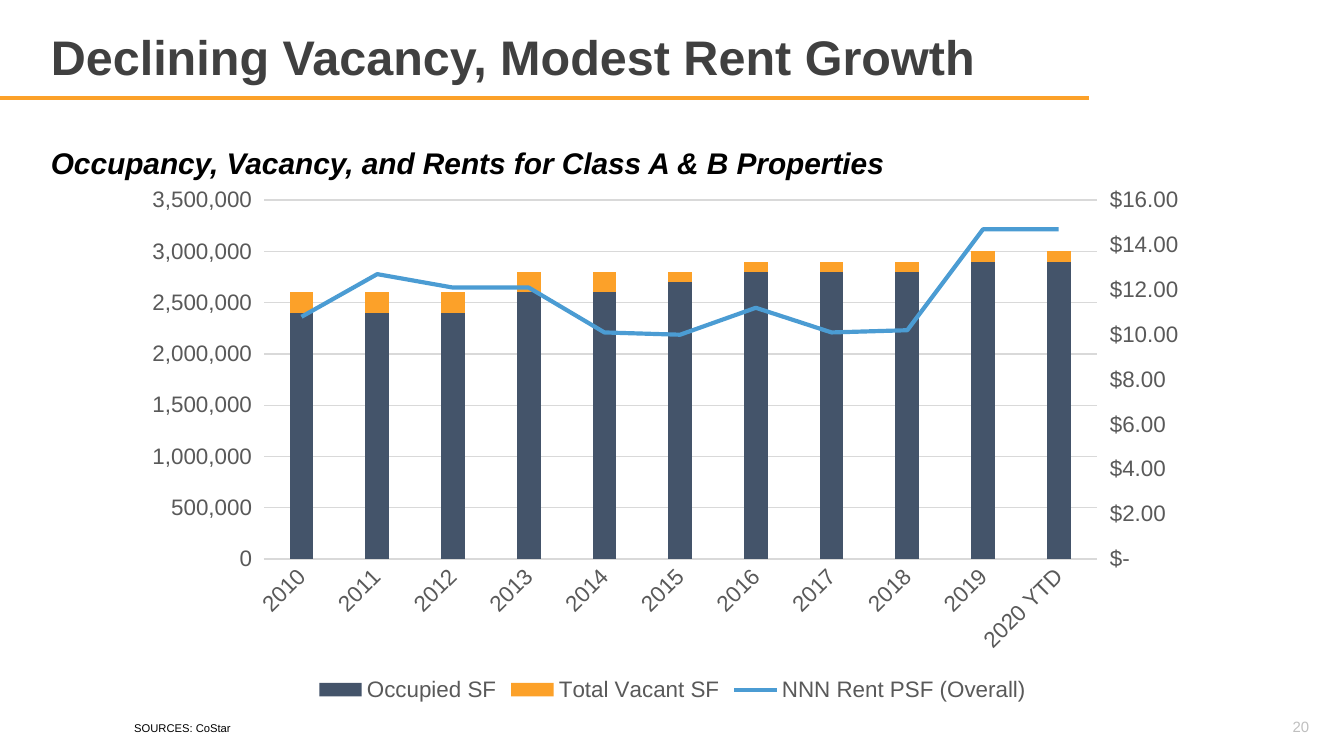
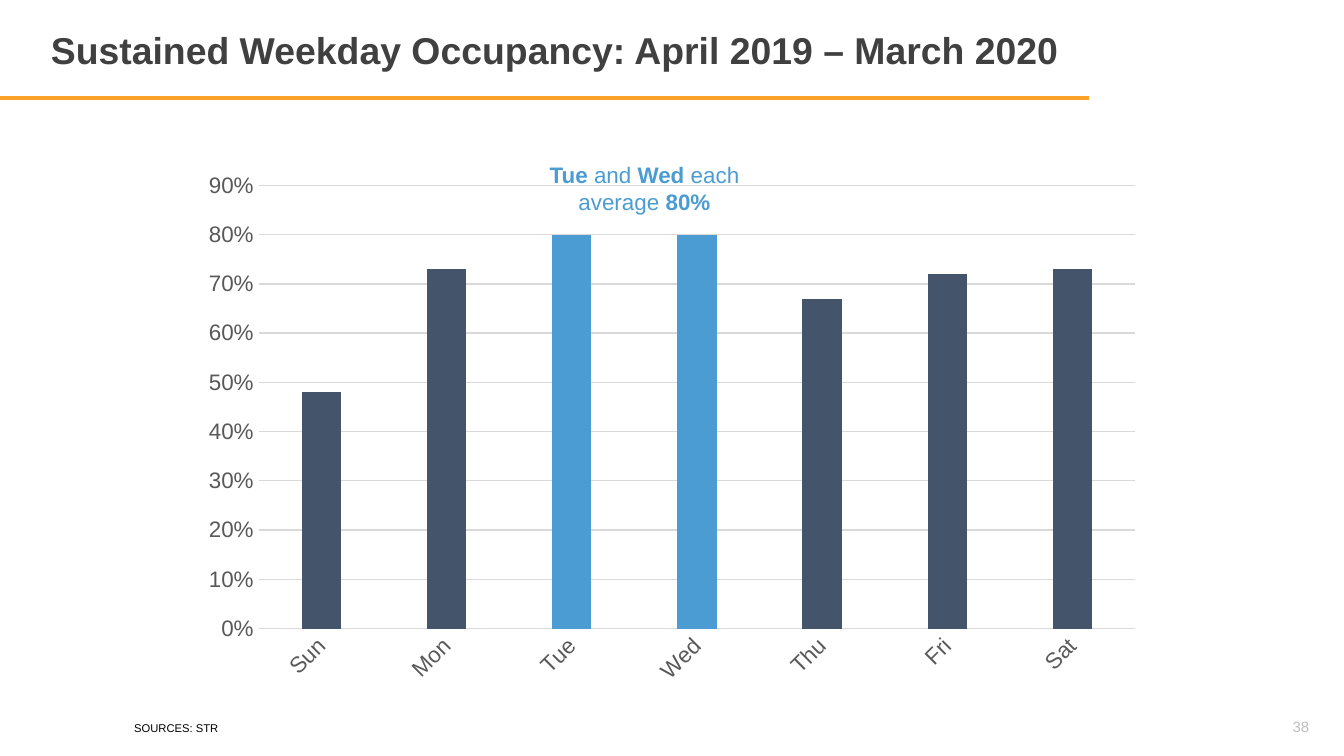
from copy import deepcopy
from dataclasses import dataclass

from lxml.etree import SubElement
from pptx import Presentation
from pptx.chart.axis import CategoryAxis, ValueAxis
from pptx.chart.data import CategoryChartData
from pptx.dml.color import RGBColor
from pptx.enum.chart import (XL_CHART_TYPE, XL_LEGEND_POSITION,
                             XL_MARKER_STYLE, XL_TICK_MARK)
from pptx.enum.shapes import MSO_CONNECTOR
from pptx.enum.text import MSO_ANCHOR, PP_ALIGN
from pptx.oxml import parse_xml
from pptx.oxml.ns import nsdecls, qn
from pptx.util import Inches, Pt


@dataclass(frozen=True)
class Theme:
    font: str = "Arial"
    title: str = "404040"
    text: str = "000000"
    label: str = "595959"
    grid: str = "D9D9D9"
    number: str = "BFBFBF"
    navy: str = "44546A"
    orange: str = "FCA129"
    blue: str = "4B9CD3"
    subtitle_size: int = 16
    label_size: int = 12
    chart_size: int = 10
    number_size: int = 8
    source_size: int = 6


THEME = Theme()

# Content
RENT = dict(
    title="Declining Vacancy, Modest Rent Growth", title_size=26, title_width=7.82,
    number="20", source="SOURCES: CoStar",
    subtitle="Occupancy, Vacancy, and Rents for Class A & B Properties",
    categories=["2010", "2011", "2012", "2013", "2014", "2015",
                "2016", "2017", "2018", "2019", "2020 YTD"],
    series=[
        ("Occupied SF", THEME.navy,
         [2400000, 2400000, 2400000, 2600000, 2600000, 2700000,
          2800000, 2800000, 2800000, 2900000, 2900000]),
        ("Total Vacant SF", THEME.orange, [200000] * 5 + [100000] * 6),
        ("NNN Rent PSF (Overall)", THEME.blue,
         [10.8, 12.7, 12.1, 12.1, 10.1, 10, 11.2, 10.1, 10.2, 14.7, 14.7]),
    ],
    frame=(0.98, 1.32, 8.05, 3.94), plot=(1.96, 1.49, 6.2, 2.67),
    kind=XL_CHART_TYPE.COLUMN_STACKED, overlap=100,
    scale=(3500000, 500000), number_format=r"#,##0_);[Red]\(#,##0\)",
)
WEEKDAY = dict(
    title="Sustained Weekday Occupancy: April 2019 – March 2020",
    title_size=20, title_width=8.21, number="38", source="SOURCES: STR",
    callout=[("Tue ", True), ("and", False), (" Wed ", True),
             ("each average", False), (" 80%", True)],
    categories=["Sun", "Mon", "Tue", "Wed", "Thu", "Fri", "Sat"],
    series=[("Series 1", THEME.navy, [0.48, 0.73, 0.8, 0.8, 0.67, 0.72, 0.73])],
    highlights=["Tue", "Wed"],
    frame=(1.41, 1.21, 7.18, 3.96), plot=(1.93, 1.38, 6.52, 3.3),
    kind=XL_CHART_TYPE.COLUMN_CLUSTERED, overlap=-27,
    scale=(0.9, 0.1), number_format="0%",
)


def style_font(font, size, color, bold=False, italic=False):
    font.name, font.size = THEME.font, Pt(size)
    font.color.rgb = RGBColor.from_string(color)
    font.bold, font.italic = bold, italic


def add_text(page, at, runs, size, color, align=PP_ALIGN.LEFT,
             anchor=MSO_ANCHOR.TOP, italic=False):
    box = page.shapes.add_textbox(*map(Inches, at))
    frame = box.text_frame
    frame.word_wrap, frame.vertical_anchor = True, anchor
    para = frame.paragraphs[0]
    para.alignment = align
    for text, bold in runs:
        span = para.add_run()
        span.text = text
        style_font(span.font, size, color, bold, italic)


def add_page(deck, content):
    """Add a page with the shared rule, title, source and page number."""
    page = deck.slides.add_slide(deck.slide_layouts[6])
    rule = page.shapes.add_connector(MSO_CONNECTOR.STRAIGHT, 0, Inches(0.73),
                                     Inches(8.1), Inches(0.73))
    rule.line.color.rgb = RGBColor.from_string(THEME.orange)
    rule.line.width = Pt(2)
    SubElement(rule._element.spPr, qn("a:effectLst"))
    add_text(page, (8.96, 5.26, 0.88, 0.3), [(content["number"], False)],
             THEME.number_size, THEME.number, PP_ALIGN.RIGHT, MSO_ANCHOR.MIDDLE)
    add_text(page, (0.28, 0.15, content["title_width"], 0.57),
             [(content["title"], True)], content["title_size"], THEME.title)
    add_text(page, (0.9, 5.32, 2.82, 0.2), [(content["source"], False)],
             THEME.source_size, THEME.text)
    return page


def place_plot(chart, frame, plot):
    """Fix the inner plot area, given in page inches."""
    parts = {"x": (plot[0] - frame[0]) / frame[2], "y": (plot[1] - frame[1]) / frame[3],
             "w": plot[2] / frame[2], "h": plot[3] / frame[3]}
    values = "".join(f'<c:{name} val="{part:.3f}"/>' for name, part in parts.items())
    layout = parse_xml(
        f'<c:layout {nsdecls("c")}><c:manualLayout><c:layoutTarget val="inner"/>'
        f'<c:xMode val="edge"/><c:yMode val="edge"/>{values}</c:manualLayout></c:layout>')
    area = chart._chartSpace.chart.plotArea
    for old in area.findall(qn("c:layout")):
        area.remove(old)
    area.insert(0, layout)


def style_axes(chart, content):
    for axis in (chart.category_axis, chart.value_axis):
        axis.major_tick_mark = axis.minor_tick_mark = XL_TICK_MARK.NONE
        style_font(axis.tick_labels.font, THEME.label_size, THEME.label)
    category, value = chart.category_axis, chart.value_axis
    category._element.find(qn("c:txPr")).find(qn("a:bodyPr")).set("rot", "-2700000")
    value.format.line.fill.background()
    value.has_major_gridlines = True
    for line in (category.format.line, value.major_gridlines.format.line):
        line.color.rgb = RGBColor.from_string(THEME.grid)
        line.width = Pt(0.75)
    value.minimum_scale = 0
    value.maximum_scale, value.major_unit = content["scale"]
    value.tick_labels.number_format = content["number_format"]
    value.tick_labels.number_format_is_linked = False


def add_column_chart(page, content):
    data = CategoryChartData()
    data.categories = content["categories"]
    for name, _, values in content["series"]:
        data.add_series(name, values)
    chart = page.shapes.add_chart(content["kind"], *map(Inches, content["frame"]),
                                  data).chart
    chart.has_title = chart.has_legend = False
    style_font(chart.font, THEME.chart_size, THEME.text)
    columns = chart.plots[0]
    columns.gap_width, columns.overlap = 219, content["overlap"]
    columns.vary_by_categories = False
    for series, (_, color, _) in zip(columns.series, content["series"]):
        series.format.fill.solid()
        series.format.fill.fore_color.rgb = RGBColor.from_string(color)
    style_axes(chart, content)
    place_plot(chart, content["frame"], content["plot"])
    return chart


def set_crossing(axis, place):
    """State where an axis element crosses its partner."""
    for old in axis.findall(qn("c:crosses")):
        axis.remove(old)
    axis.find(qn("c:crossAx")).addnext(
        parse_xml(f'<c:crosses {nsdecls("c")} val="{place}"/>'))


def move_last_series_to_line(chart, color):
    """Turn the last column series into a line on a right-hand axis."""
    columns = chart._chartSpace.chart.plotArea.find(qn("c:barChart"))
    rent = columns.findall(qn("c:ser"))[-1]
    for tag in ("c:invertIfNegative", "c:spPr"):
        for child in rent.findall(qn(tag)):
            rent.remove(child)
    line_chart = parse_xml(
        f'<c:lineChart {nsdecls("c")}><c:grouping val="standard"/>'
        '<c:varyColors val="0"/><c:marker val="1"/>'
        '<c:axId val="5001"/><c:axId val="5002"/></c:lineChart>')
    line_chart.insert(2, rent)
    columns.addnext(line_chart)

    # Secondary axes start as copies of the primary pair
    primary = chart.value_axis._element
    value = deepcopy(primary)
    category = deepcopy(chart.category_axis._element)
    primary.addnext(value)
    value.addnext(category)
    for element, own, other in ((category, "5001", "5002"), (value, "5002", "5001")):
        element.find(qn("c:axId")).set("val", own)
        element.find(qn("c:crossAx")).set("val", other)
    value.find(qn("c:axPos")).set("val", "r")
    set_crossing(category, "autoZero")
    set_crossing(value, "max")
    CategoryAxis(category).visible = False
    right = ValueAxis(value)
    right.has_major_gridlines = False
    right.major_tick_mark = XL_TICK_MARK.OUTSIDE
    right.maximum_scale, right.major_unit = 16, 2
    right.tick_labels.number_format = r'"$"#,##0.00;;"$-"'

    series = chart.plots[1].series[0]
    series.smooth = False
    series.marker.style = XL_MARKER_STYLE.NONE
    series.format.line.color.rgb = RGBColor.from_string(color)
    series.format.line.width = Pt(2.25)


def build_rent_page(deck):
    page = add_page(deck, RENT)
    add_text(page, (0.28, 1.03, 9.01, 0.37), [(RENT["subtitle"], True)],
             THEME.subtitle_size, THEME.text, italic=True)
    chart = add_column_chart(page, RENT)
    move_last_series_to_line(chart, THEME.blue)
    chart.has_legend = True
    chart.legend.position = XL_LEGEND_POSITION.BOTTOM
    chart.legend.include_in_layout = False
    style_font(chart.legend.font, THEME.label_size, THEME.label)


def build_weekday_page(deck):
    page = add_page(deck, WEEKDAY)
    add_text(page, (3.94, 1.15, 1.71, 0.5), WEEKDAY["callout"],
             THEME.label_size, THEME.blue, PP_ALIGN.CENTER)
    chart = add_column_chart(page, WEEKDAY)
    for day in WEEKDAY["highlights"]:
        point = chart.plots[0].series[0].points[WEEKDAY["categories"].index(day)]
        point.format.fill.solid()
        point.format.fill.fore_color.rgb = RGBColor.from_string(THEME.blue)


def main():
    deck = Presentation()
    deck.slide_width = Inches(10)
    deck.slide_height = deck.slide_width * 9 // 16
    build_rent_page(deck)
    build_weekday_page(deck)
    deck.save("out.pptx")


if __name__ == "__main__":
    main()
